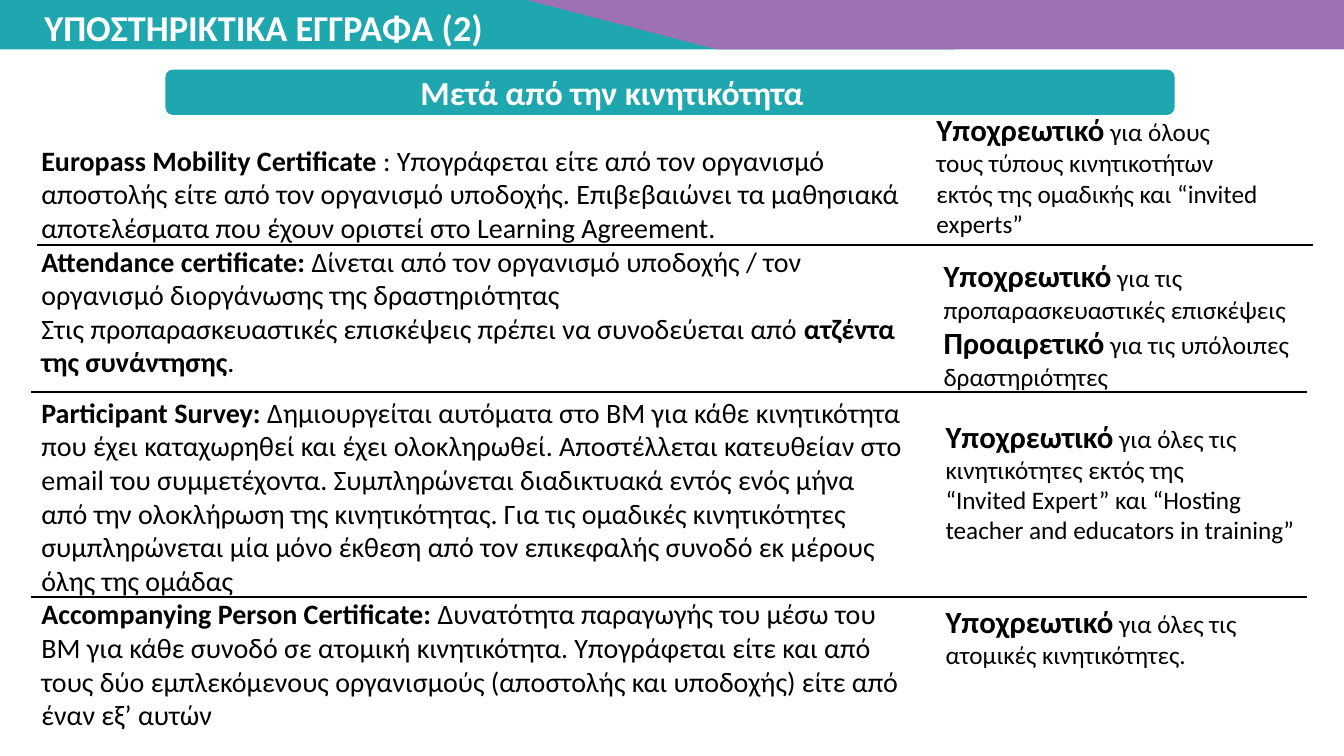
from pptx import Presentation
from pptx.dml.color import RGBColor
from pptx.enum.shapes import MSO_CONNECTOR as Conn, MSO_SHAPE as Kind
from pptx.enum.text import MSO_ANCHOR as Anchor, MSO_AUTO_SIZE as Fit, PP_ALIGN as Align
from pptx.oxml.ns import qn
from pptx.util import Inches, Pt
from lxml import etree

TEAL, PURPLE, BLACK, WHITE = "1EA7AE", "9D72B5", "000000", "FFFFFF"

# Asterisks enclose bold words.
DOCS = [
    "*Europass Mobility Certificate *: Υπογράφεται είτε από τον οργανισμό αποστολής "
    "είτε από τον οργανισμό υποδοχής. Επιβεβαιώνει τα μαθησιακά αποτελέσματα που έχουν "
    "οριστεί στο Learning Agreement.",
    "*Attendance certificate: *Δίνεται από τον οργανισμό υποδοχής / τον οργανισμό "
    "διοργάνωσης της δραστηριότητας",
    "Στις προπαρασκευαστικές επισκέψεις πρέπει να συνοδεύεται από *ατζέντα της "
    "συνάντησης*.",
    "*Participant Survey: *Δημιουργείται αυτόματα στο ΒΜ για κάθε κινητικότητα που έχει "
    "καταχωρηθεί και έχει ολοκληρωθεί. Αποστέλλεται κατευθείαν στο email του "
    "συμμετέχοντα. Συμπληρώνεται διαδικτυακά εντός ενός μήνα από την ολοκλήρωση της "
    "κινητικότητας. Για τις ομαδικές κινητικότητες συμπληρώνεται μία μόνο έκθεση από τον "
    "επικεφαλής συνοδό εκ μέρους όλης της ομάδας",
    "*Accompanying Person Certificate: *Δυνατότητα παραγωγής του μέσω του ΒΜ για κάθε "
    "συνοδό σε ατομική κινητικότητα. Υπογράφεται είτε και από τους δύο εμπλεκόμενους "
    "οργανισμούς (αποστολής και υποδοχής) είτε από έναν εξ’ αυτών",
]
SURVEY = 3

NOTES = [
    ((9.19, 1.05, 4.07, 1.38), [
        "*Υποχρεωτικό* για όλους",
        "τους τύπους κινητικοτήτων",
        "εκτός της ομαδικής και “invited experts”"]),
    ((9.26, 2.5, 3.73, 1.45), [
        "*Υποχρεωτικό* για τις",
        "προπαρασκευαστικές επισκέψεις",
        "*Προαιρετικό* για τις υπόλοιπες",
        "δραστηριότητες"]),
    ((9.28, 4.09, 3.73, 1.38), [
        "*Υποχρεωτικό* για όλες τις",
        "κινητικότητες εκτός της",
        "“Invited Expert” και “Hosting teacher and educators in training”"]),
    ((9.28, 5.93, 3.73, 0.77), [
        "*Υποχρεωτικό* για όλες τις ατομικές κινητικότητες."]),
]

RULES = [(0.37, 2.43), (0.31, 3.89), (0.31, 5.92)]
RULE_WIDTH = 12.65


def paint(color, code):
    color.rgb = RGBColor.from_string(code)


def block(slide, kind, box, code, turn=0):
    shape = slide.shapes.add_shape(kind, *map(Inches, box))
    shape.shadow.inherit = False
    shape.fill.solid()
    paint(shape.fill.fore_color, code)
    shape.line.fill.background()
    shape.rotation = turn
    return shape


def rule(slide, left, top):
    line = slide.shapes.add_connector(
        Conn.STRAIGHT, Inches(left), Inches(top), Inches(left + RULE_WIDTH), Inches(top))
    line.line.width = Pt(1.5)
    paint(line.line.color, BLACK)
    etree.SubElement(line.element.spPr, qn("a:effectLst"))


def place(shape, box):
    for name, value in zip(("left", "top", "width", "height"), box):
        setattr(shape, name, Inches(value))


def write(shape, texts, bold, plain=None, code=BLACK, align=Align.LEFT):
    """Fill a shape with paragraphs; bold and plain are point sizes."""
    frame = shape.text_frame
    look = {"word_wrap": True, "auto_size": Fit.NONE, "vertical_anchor": Anchor.TOP}
    for name, value in look.items():
        setattr(frame, name, value)
    for i, text in enumerate(texts):
        para = frame.add_paragraph() if i else frame.paragraphs[0]
        para.alignment = align
        para.space_before = Pt(0)
        for j, part in enumerate(text.split("*")):
            if not part:
                continue
            run = para.add_run()
            run.text = part
            strong = j % 2 == 1
            style = {"name": "Calibri", "size": Pt(bold if strong else plain),
                     "bold": strong}
            for name, value in style.items():
                setattr(run.font, name, value)
            paint(run.font.color, code)


def label(slide, box, texts, *args, **style):
    write(slide.shapes.add_textbox(*map(Inches, box)), texts, *args, **style)


def fill_body(body):
    place(body, (0.31, 1.37, 8.75, 5.99))
    write(body, DOCS, 20, 20)
    for para in body.text_frame.paragraphs:
        props = para._p.get_or_add_pPr()
        props.set("marL", "0")
        props.set("indent", "0")
        etree.SubElement(props, qn("a:buNone"))
    body.text_frame.paragraphs[SURVEY].space_before = Pt(12)


def main():
    deck = Presentation()
    deck.slide_width, deck.slide_height = Inches(13.33), Inches(7.5)
    slide = deck.slides.add_slide(deck.slide_layouts[1])

    block(slide, Kind.RECTANGLE, (0, -0.04, 9.47, 0.53), TEAL)
    block(slide, Kind.RECTANGLE, (7.12, -0.04, 6.21, 0.53), PURPLE, 180)
    wedge = block(slide, Kind.ISOSCELES_TRIANGLE, (5.07, -0.04, 4, 0.53), PURPLE, 180)
    wedge.adjustments[0] = 0.49
    block(slide, Kind.ROUNDED_RECTANGLE, (1.64, 0.69, 10.01, 0.45), TEAL)
    label(slide, (1.4, 0.66, 9.34, 0.5), ["*Μετά από την κινητικότητα*"], 24,
          code=WHITE, align=Align.CENTER)

    fill_body(slide.placeholders[1])
    for left, top in RULES:
        rule(slide, left, top)
    for box, texts in NOTES:
        label(slide, box, texts, 22, 18)

    title = slide.shapes.title
    place(title, (0.34, 0, 5.05, 0.54))
    write(title, ["*ΥΠΟΣΤΗΡΙΚΤΙΚΑ ΕΓΓΡΑΦΑ (2)*"], 26, code=WHITE)
    title.element.getparent().append(title.element)  # in front of the header band

    deck.save("out.pptx")


if __name__ == "__main__":
    main()
